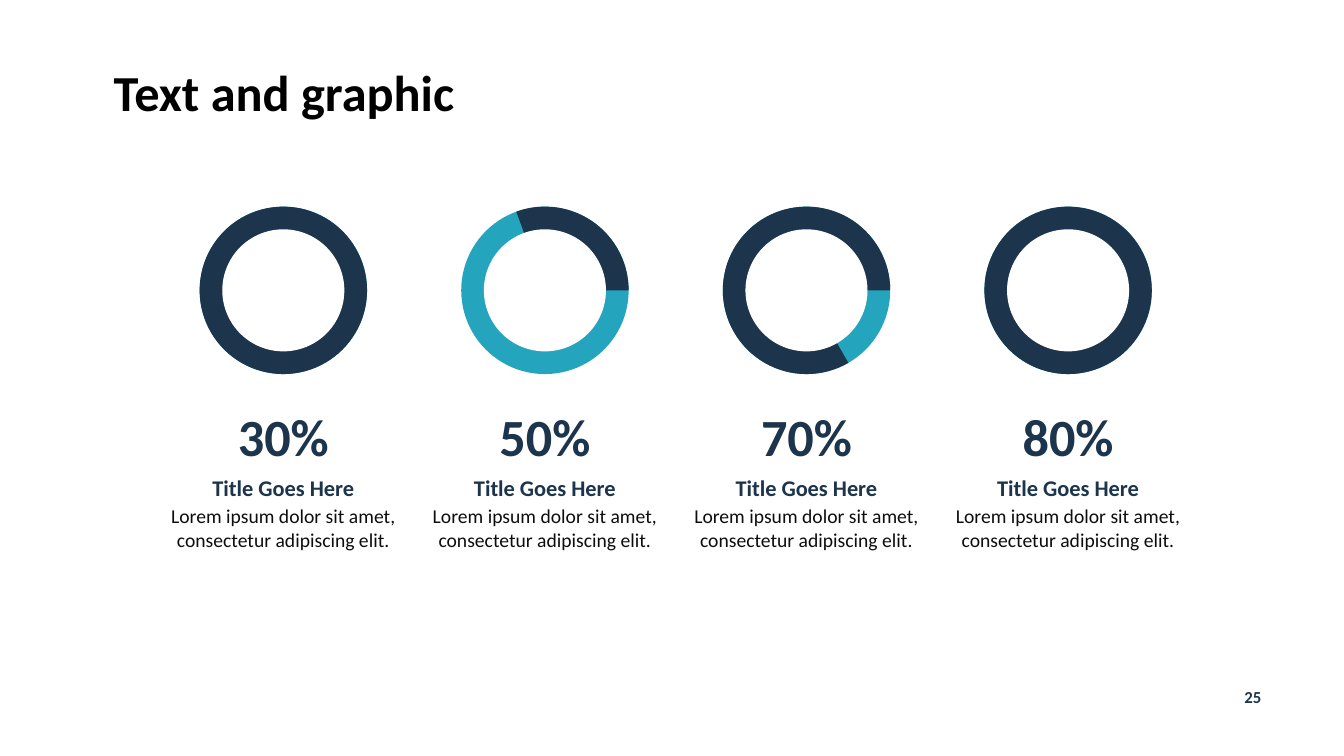
from pptx import Presentation
from pptx.dml.color import RGBColor
from pptx.enum.shapes import MSO_SHAPE as Shape
from pptx.enum.text import MSO_ANCHOR as Anchor, PP_ALIGN as Align
from pptx.util import Pt

NAVY = RGBColor(0x1D, 0x34, 0x4D)
TEAL = RGBColor(0x24, 0xA5, 0xBD)
WHITE = RGBColor(0xFF, 0xFF, 0xFF)
BLACK = RGBColor(0, 0, 0)
INK = RGBColor(0x0D, 0x0D, 0x0D)

HEAD = dict(size=Pt(36), bold=True)
RATE = dict(size=Pt(37.3), bold=True)
NAME = dict(size=Pt(16), bold=True)
BODY = dict(size=Pt(14), bold=False)
PAGE = dict(size=Pt(12), bold=True)


def write(para, text, form, color, align=Align.CENTER):
    para.alignment = align
    run = para.add_run()
    run.text = text
    run.font.name = "Calibri"
    run.font.color.rgb = color
    for key, value in form.items():
        setattr(run.font, key, value)


def add_box(left, top, width, height, side, edge):
    box = slide.shapes.add_textbox(Pt(left), Pt(top), Pt(width), Pt(height))
    frame = box.text_frame
    frame.word_wrap = True
    frame.margin_left = frame.margin_right = Pt(side)
    frame.margin_top = frame.margin_bottom = Pt(edge)
    return frame


deck = Presentation()
deck.slide_width, deck.slide_height = Pt(960), Pt(540)
slide = deck.slides.add_slide(deck.slide_layouts[5])

title = slide.shapes.title
title.left, title.top, title.width, title.height = Pt(74), Pt(44.5), Pt(569.5), Pt(47)
title.text_frame.vertical_anchor = Anchor.MIDDLE
head = title.text_frame.paragraphs[0]
head.line_spacing = 0.9
write(head, "Text and graphic", HEAD, BLACK, Align.LEFT)

# Each share is paired with the angle, in degrees, where its dark arc starts.
RINGS = [("30%", 161), ("50%", 90), ("70%", 21.6), ("80%", 326.9)]
FIRST, STEP = 202.4, 186.85
MID, OUTER, INNER = 207.4, 119.6, 87.2
LAYERS = [
    (Shape.OVAL, OUTER, TEAL),
    (Shape.PIE, OUTER, NAVY),
    (Shape.OVAL, INNER, WHITE),
]

for i, (rate, angle) in enumerate(RINGS):
    x = FIRST + i * STEP
    ring = slide.shapes.add_group_shape()
    for kind, size, color in LAYERS:
        part = ring.shapes.add_shape(
            kind, Pt(x - size / 2), Pt(MID - size / 2), Pt(size), Pt(size))
        part.shadow.inherit = False
        part.fill.solid()
        part.fill.fore_color.rgb = color
        part.line.fill.background()
        if kind == Shape.PIE:
            # One adjustment unit is 0.6 degrees.
            part.adjustments[0] = angle / 0.6
            part.adjustments[1] = 270 / 0.6

    frame = add_box(x - OUTER / 2, 283.7, OUTER, 54.7, 9.6, 4.8)
    write(frame.paragraphs[0], rate, RATE, NAVY)

    frame = add_box(x - 83, 338.4, 166, 56, 0, 0)
    write(frame.paragraphs[0], "Title Goes Here", NAME, NAVY)
    body = frame.add_paragraph()
    body.space_before = Pt(2.7)
    write(body, "Lorem ipsum dolor sit amet, consectetur adipiscing elit.", BODY, INK)

frame = add_box(859, 486.7, 72, 21.6, 7.2, 3.6)
write(frame.paragraphs[0], "25", PAGE, NAVY)

deck.save("out.pptx")
